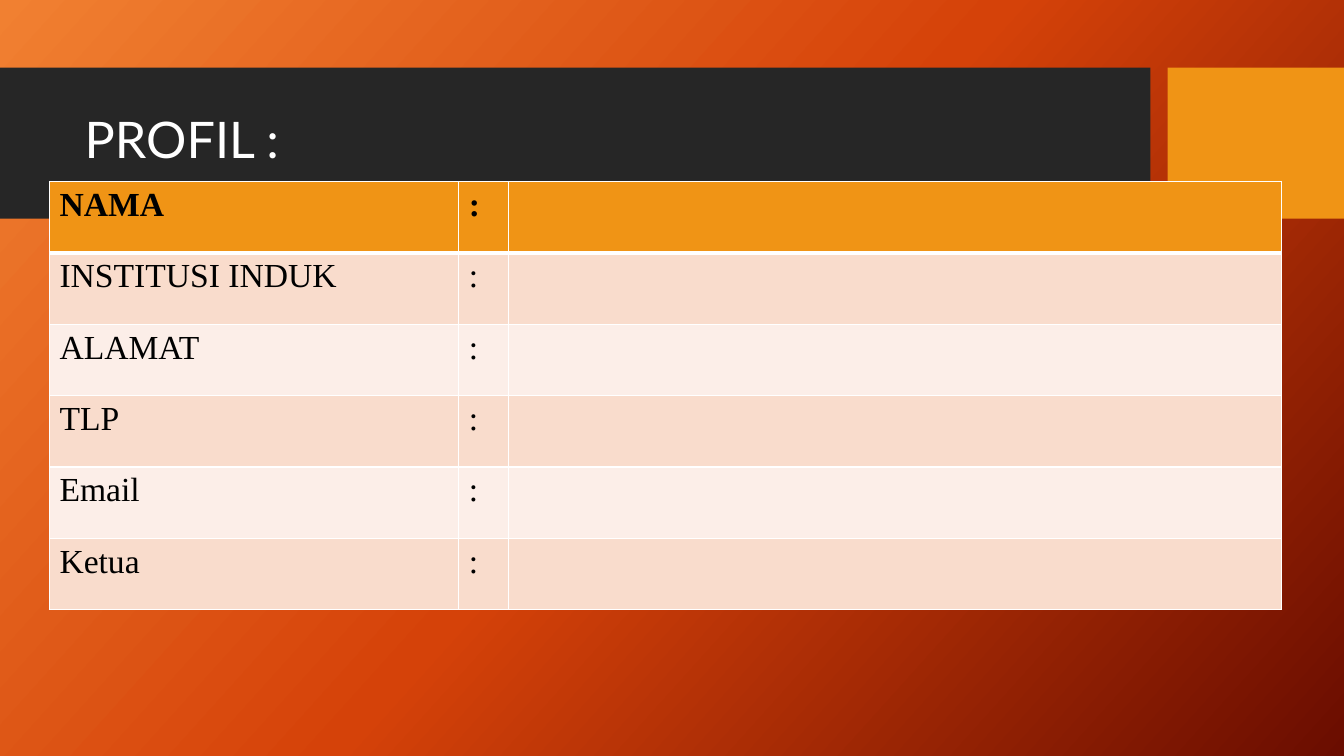
from copy import deepcopy

from lxml.etree import SubElement
from pptx import Presentation
from pptx.dml.color import RGBColor
from pptx.enum.shapes import MSO_SHAPE
from pptx.enum.text import MSO_ANCHOR, MSO_AUTO_SIZE, PP_ALIGN
from pptx.oxml.ns import qn
from pptx.util import Inches, Pt

WHITE = RGBColor(0xFF, 0xFF, 0xFF)
BLACK = RGBColor(0x00, 0x00, 0x00)
CHARCOAL = RGBColor(0x26, 0x26, 0x26)
AMBER = RGBColor(0xF0, 0x94, 0x15)
PEACH = RGBColor(0xF9, 0xDC, 0xCC)
PALE_PEACH = RGBColor(0xFC, 0xEE, 0xE8)
BACKDROP = [
    (0, RGBColor(0xF1, 0x80, 0x31)),
    (0.5, RGBColor(0xD5, 0x42, 0x09)),
    (1, RGBColor(0x6A, 0x0D, 0x00)),
]

SLIDE_WIDTH, SLIDE_HEIGHT = 13.33, 7.5
BAND_TOP, BAND_HEIGHT = 0.67, 1.5
COLUMN_WIDTHS = [4.06, 0.49, 7.67]
ROW_HEIGHT = 4.25 / 6
FIELDS = ["NAMA", "INSTITUSI INDUK", "ALAMAT", "TLP", "Email", "Ketua"]


def paint_backdrop(slide):
    """Fill the slide background with the diagonal three-colour gradient."""
    fill = slide.background.fill
    fill.gradient()
    fill.gradient_angle = 360 - 42
    stop_list = slide.element.find(".//" + qn("a:gsLst"))
    stop_list.insert(1, deepcopy(stop_list[0]))
    for stop, (position, color) in zip(fill.gradient_stops, BACKDROP):
        stop.position = position
        stop.color.rgb = color


def add_band(slide, left, width, color):
    """Add one flat block of the heading band."""
    band = slide.shapes.add_shape(
        MSO_SHAPE.RECTANGLE, Inches(left), Inches(BAND_TOP),
        Inches(width), Inches(BAND_HEIGHT))
    band.shadow.inherit = False
    band.fill.solid()
    band.fill.fore_color.rgb = color
    band.line.fill.background()


def style_text(paragraph, font_name, size, color, bold=False):
    """Apply one font style to a paragraph and its runs."""
    for font in [paragraph.font] + [run.font for run in paragraph.runs]:
        font.name = font_name
        font.size = Pt(size)
        font.bold = bold
        font.color.rgb = color


def place_title(slide, wording):
    """Move and format the title placeholder above the heading band."""
    title = slide.shapes.title
    slide.shapes.element.append(title.element)
    title.left, title.top = Inches(0.74), Inches(0.82)
    title.width, title.height = Inches(10.51), Inches(1.18)
    frame = title.text_frame
    frame.text = wording
    frame.auto_size = MSO_AUTO_SIZE.NONE
    frame.vertical_anchor = MSO_ANCHOR.MIDDLE
    heading = frame.paragraphs[0]
    heading.alignment = PP_ALIGN.LEFT
    heading.line_spacing = 0.9
    style_text(heading, "Lato", 36, WHITE)


def set_borders(cell, top, bottom):
    """Draw white cell borders, with top and bottom widths in points."""
    properties = cell._tc.get_or_add_tcPr()
    for side, width in (("L", 1), ("R", 1), ("T", top), ("B", bottom)):
        border = SubElement(properties, qn(f"a:ln{side}"), w=str(Pt(width)))
        solid = SubElement(border, qn("a:solidFill"))
        SubElement(solid, qn("a:srgbClr"), val=str(WHITE))


def add_profile_table(slide):
    """Add the profile form with a label, a colon and a blank per row."""
    profile = slide.shapes.add_table(
        len(FIELDS), len(COLUMN_WIDTHS), Inches(0.49), Inches(1.8),
        Inches(sum(COLUMN_WIDTHS)), Inches(ROW_HEIGHT * len(FIELDS))).table
    for column, width in zip(profile.columns, COLUMN_WIDTHS):
        column.width = Inches(width)
    for index, (row, field) in enumerate(zip(profile.rows, FIELDS)):
        row.height = Inches(ROW_HEIGHT)
        is_header = index == 0
        color = AMBER if is_header else (PALE_PEACH, PEACH)[index % 2]
        for cell, wording in zip(row.cells, (field, ":", "")):
            cell.text = wording
            style_text(cell.text_frame.paragraphs[0], "Times New Roman", 24,
                       BLACK, is_header)
            set_borders(cell, 3 if index == 1 else 1, 3 if is_header else 1)
            cell.fill.solid()
            cell.fill.fore_color.rgb = color


def main():
    """Build the profile slide and save it."""
    deck = Presentation()
    deck.slide_width = Inches(SLIDE_WIDTH)
    deck.slide_height = Inches(SLIDE_HEIGHT)
    slide = deck.slides.add_slide(deck.slide_layouts[5])
    paint_backdrop(slide)
    add_band(slide, 0, 11.41, CHARCOAL)
    add_band(slide, 11.58, SLIDE_WIDTH - 11.58, AMBER)
    place_title(slide, "PROFIL :")
    add_profile_table(slide)
    deck.save("out.pptx")


if __name__ == "__main__":
    main()
